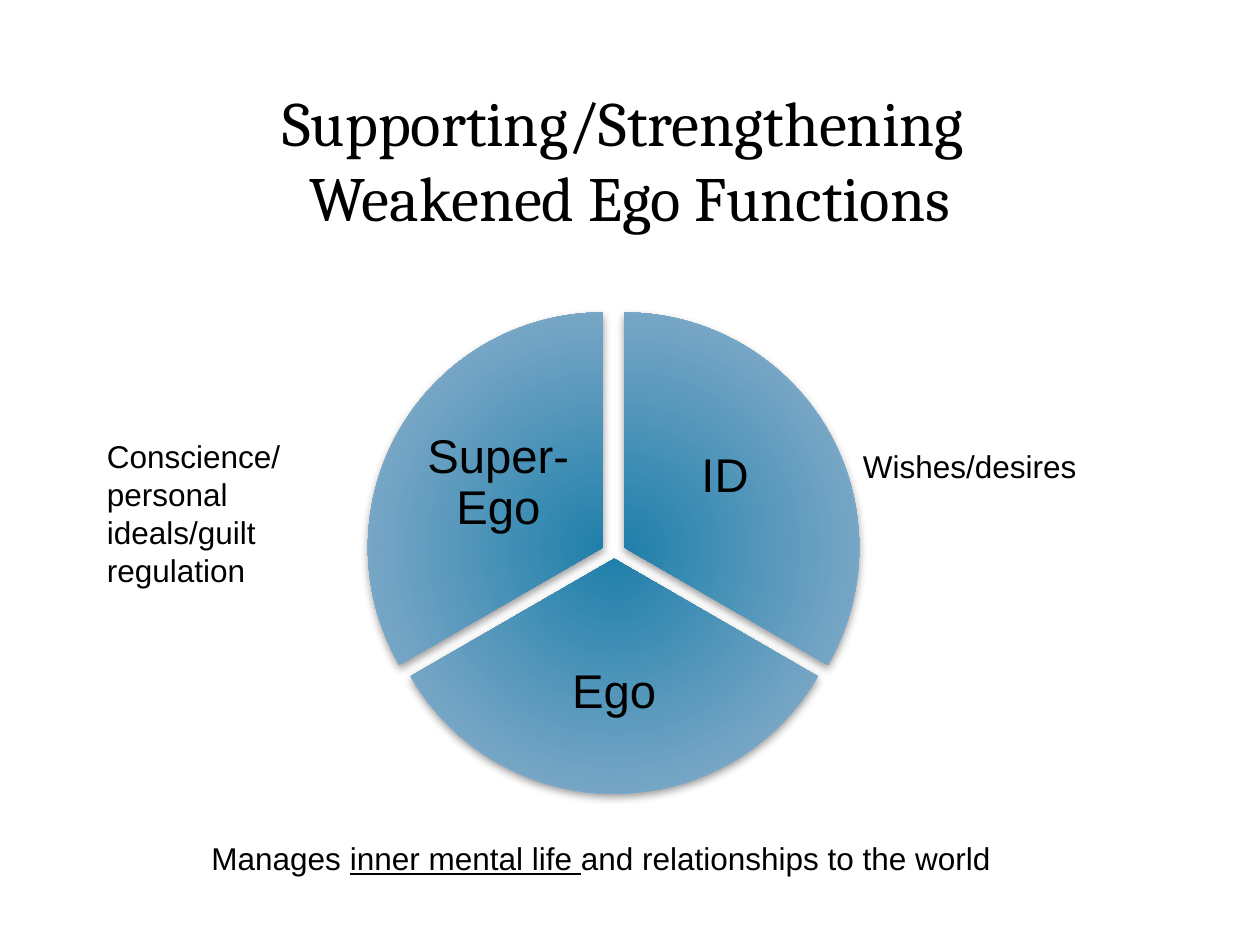
from dataclasses import dataclass

from lxml.etree import SubElement
from pptx import Presentation
from pptx.dml.color import RGBColor
from pptx.enum.shapes import MSO_SHAPE as Shape
from pptx.enum.text import MSO_ANCHOR as Anchor, MSO_AUTO_SIZE as AutoSize, PP_ALIGN as Align
from pptx.oxml.ns import qn
from pptx.util import Pt

EMU_PER_PX = 9144  # 100 px to the inch


@dataclass(frozen=True)
class Theme:
    heading_font: str = "Cambria"
    body_font: str = "Arial"
    text: str = "000000"
    shadow: str = "000000"
    background: str = "FFFFFF"
    gradient: tuple = ((0, "2080AB"), (69, "75A5C5"), (100, "B8CCDC"))
    title_size: int = 36
    sector_size: int = 27
    note_size: int = 18


THEME = Theme()


def px(*lengths):
    return [length * EMU_PER_PX for length in lengths]


def add_run(paragraph, text, size, font_name=THEME.body_font, underline=None):
    run = paragraph.add_run()
    run.text = text
    run.font.name = font_name
    run.font.size = Pt(size)
    run.font.color.rgb = RGBColor.from_string(THEME.text)
    run.font.underline = underline


def add_child(parent, tag, **attributes):
    values = {name: str(value) for name, value in attributes.items()}
    return SubElement(parent, qn(f"a:{tag}"), values)


def style_sector(shape):
    """Give a sector its radial gradient and soft shadow, without an outline."""
    shape.line.fill.background()
    properties = shape._element.spPr
    gradient = add_child(properties, "gradFill", rotWithShape=1)
    stops = add_child(gradient, "gsLst")
    for position, color in THEME.gradient:
        stop = add_child(stops, "gs", pos=position * 1000)
        add_child(stop, "srgbClr", val=color)
    radial = add_child(gradient, "path", path="circle")
    add_child(radial, "fillToRect", l=100000, t=100000, r=100000, b=100000)
    properties.find(qn("a:ln")).addprevious(gradient)

    effects = add_child(properties, "effectLst")
    shadow = add_child(effects, "outerShdw", blurRad=Pt(5), dist=Pt(2),
                       dir=90 * 60000, rotWithShape=0)
    color = add_child(shadow, "srgbClr", val=THEME.shadow)
    add_child(color, "alpha", val=40000)


def add_sector_label(group, text, box):
    label = group.shapes.add_textbox(*px(*box))
    frame = label.text_frame
    frame.word_wrap = True
    frame.vertical_anchor = Anchor.MIDDLE
    frame.margin_left = frame.margin_right = px(4)[0]
    frame.margin_top = frame.margin_bottom = px(4)[0]
    paragraph = frame.paragraphs[0]
    paragraph.alignment = Align.CENTER
    paragraph.line_spacing = 0.9
    add_run(paragraph, text, THEME.sector_size)


def add_wheel(slide, left, top, diameter):
    """Three equal sectors, clockwise from the top, pushed slightly apart."""
    sectors = [
        # text, sector offset, label box relative to the wheel
        ("ID", (17, 0), (220, 69, 127, 124)),
        ("Ego", (9, 9), (111, 244, 169, 116)),
        ("Super-Ego", (0, 0), (40, 74, 127, 124)),
    ]
    sweep = 360 // len(sectors)
    group = slide.shapes.add_group_shape()
    for index, (text, (dx, dy), (x, y, width, height)) in enumerate(sectors):
        sector = group.shapes.add_shape(
            Shape.PIE, *px(left + dx, top + dy, diameter, diameter))
        start = 270 + index * sweep
        for side, angle in enumerate((start, start + sweep)):
            sector.adjustments[side] = angle % 360 * 0.6
        style_sector(sector)
        add_sector_label(group, text, (left + x, top + y, width, height))


def add_note(slide, box, paragraphs):
    """Add a text box; each paragraph is a list of (text, underline) runs."""
    frame = slide.shapes.add_textbox(*px(*box)).text_frame
    frame.word_wrap = True
    frame.auto_size = AutoSize.SHAPE_TO_FIT_TEXT
    for index, runs in enumerate(paragraphs):
        paragraph = frame.add_paragraph() if index else frame.paragraphs[0]
        for text, underline in runs:
            add_run(paragraph, text, THEME.note_size, underline=underline)


def set_title(slide, box, lines):
    title = slide.shapes.title
    title.left, title.top, title.width, title.height = px(*box)
    frame = title.text_frame
    frame.word_wrap = True
    frame.auto_size = AutoSize.NONE
    frame.vertical_anchor = Anchor.TOP
    paragraph = frame.paragraphs[0]
    paragraph.alignment = Align.CENTER
    for index, line in enumerate(lines):
        if index:
            paragraph.add_line_break()
        add_run(paragraph, line, THEME.title_size, THEME.heading_font)


def main():
    presentation = Presentation()
    presentation.slide_width, presentation.slide_height = px(1000, 750)
    slide = presentation.slides.add_slide(presentation.slide_layouts[5])
    background = slide.background.fill
    background.solid()
    background.fore_color.rgb = RGBColor.from_string(THEME.background)

    set_title(slide, (75, 61, 850, 161),
              ["Supporting/Strengthening ", "Weakened Ego Functions"])
    add_wheel(slide, 292, 248, 373)
    add_note(slide, (75, 342, 225, 131), [
        [("Conscience/", None)],
        [("personal ideals/guilt regulation", None)],
    ])
    add_note(slide, (158, 661, 800, 50), [[
        ("Manages ", None),
        ("inner mental life ", True),
        ("and relationships to the world", None),
    ]])
    add_note(slide, (675, 350, 258, 50), [[("Wishes/desires", None)]])
    presentation.save("out.pptx")


if __name__ == "__main__":
    main()
